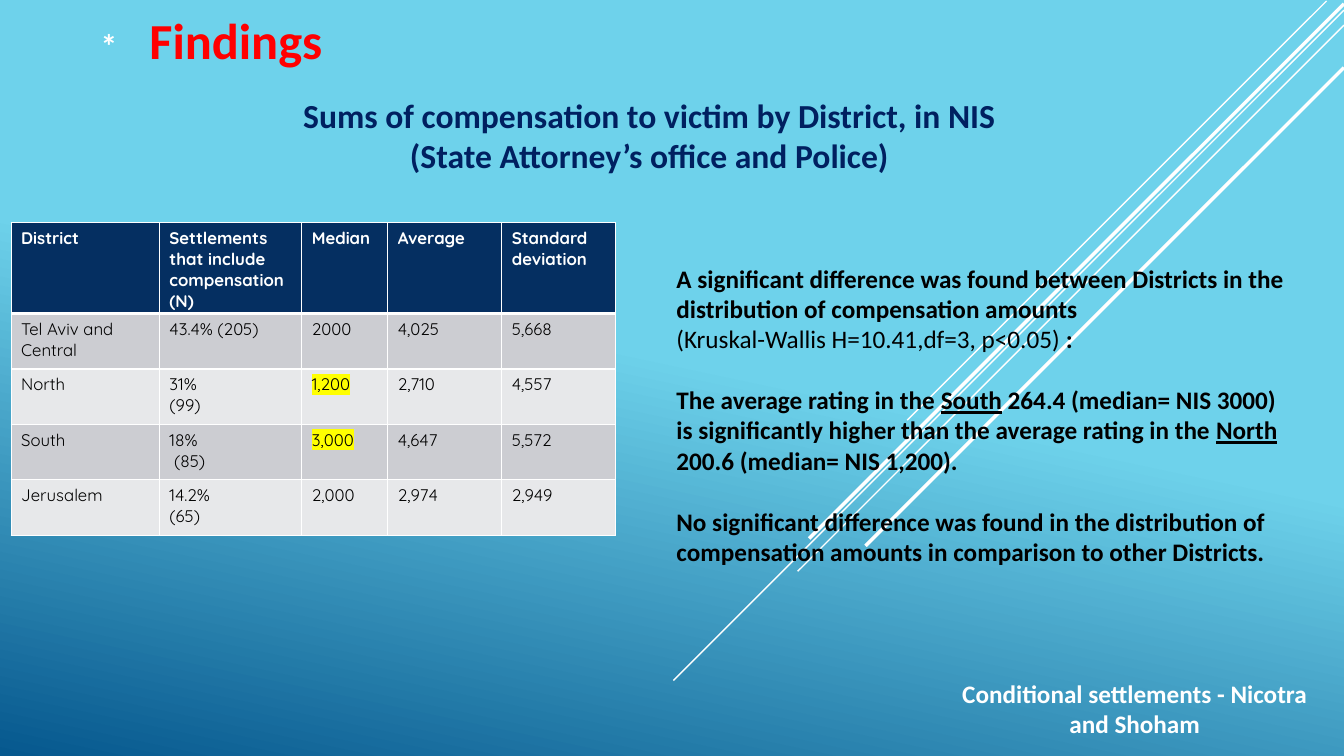
from lxml.etree import SubElement, fromstring
from pptx import Presentation
from pptx.dml.color import RGBColor
from pptx.enum.shapes import MSO_CONNECTOR
from pptx.enum.text import MSO_ANCHOR, MSO_AUTO_SIZE, PP_ALIGN
from pptx.oxml.ns import nsdecls, qn
from pptx.util import Inches, Pt

WHITE = RGBColor(0xFF, 0xFF, 0xFF)
BLACK = RGBColor(0, 0, 0)
RED = RGBColor(0xFF, 0, 0)
NAVY = RGBColor(0, 0x20, 0x60)
HEADER = RGBColor(0x05, 0x2F, 0x61)
BANDS = [RGBColor(0xE7, 0xE8, 0xEA), RGBColor(0xCC, 0xCD, 0xD2)]
SKY = RGBColor(0x6E, 0xD2, 0xEB)
DEEP = RGBColor(0x06, 0x58, 0x8E)
YELLOW = RGBColor(0xFF, 0xFF, 0)

prs = Presentation()
prs.slide_width, prs.slide_height = Inches(13.33), Inches(7.5)
W, H = prs.slide_width / 100, prs.slide_height / 100
s = prs.slides.add_slide(prs.slide_layouts[6])


def add_run(p, text, rgb, fmt):
    r = p.add_run()
    r.text = text
    r.font.color.rgb = rgb
    for key, value in fmt.items():
        setattr(r.font, key, value)
    return r


def add_text(box, paragraphs, rgb, fmt, para, frame):
    x, y, w, h = box
    tf = s.shapes.add_textbox(int(x * W), int(y * H), int(w * W), int(h * H)).text_frame
    for key, value in {"word_wrap": True, **frame}.items():
        setattr(tf, key, value)
    for i, runs in enumerate(paragraphs):
        p = tf.add_paragraph() if i else tf.paragraphs[0]
        for key, value in para.items():
            if i or key != "space_before":
                setattr(p, key, value)
        for text, extra in runs:
            if text == "\n":
                p.add_line_break()
            else:
                add_run(p, text, rgb, {**fmt, **extra})


fill = s.background.fill
fill.gradient()
fill.gradient_angle = 258
for stop, position, rgb in zip(fill.gradient_stops, (0.48, 1), (SKY, DEEP)):
    stop.position = position
    stop.color.rgb = rgb

for x, y, run, weight in [
    (98.7, 0.13, 31.2, 1),
    (100, 1.33, 49.9, 1),
    (100, 3.33, 40.65, 1),
    (100, 0.5, 39.8, 2.5),
    (100, 8.93, 35.6, 2.5),
]:
    line = s.shapes.add_connector(
        MSO_CONNECTOR.STRAIGHT,
        int(x * W), int(y * H), int((x - run) * W), int(y * H + run * W),
    )
    line.line.color.rgb = WHITE
    line.line.width = Pt(weight)
    SubElement(line._element.spPr, qn("a:effectLst"))

center = {"alignment": PP_ALIGN.CENTER}
grow = {"auto_size": MSO_AUTO_SIZE.SHAPE_TO_FIT_TEXT}
middle = {"vertical_anchor": MSO_ANCHOR.MIDDLE}
body = {"name": "Calibri", "size": Pt(18), "bold": True}
plain, under = {"bold": False}, {"underline": True}

findings = [
    [
        ("A significant difference was found between Districts in the distribution of compensation amounts ", {}),
        ("\n", {}),
        ("(Kruskal-Wallis H=10.41,df=3, p<0.05)", plain),
        (" :", {}),
    ],
    [
        ("The average rating in the ", {}),
        ("South", under),
        (" 264.4 (median= NIS 3000) is significantly higher than the average rating in the ", {}),
        ("North", under),
        (" 200.6 (median= NIS 1,200).", {}),
    ],
    [("No significant difference was found in the distribution of compensation amounts "
      "in comparison to other Districts.", {})],
]
heading = "Sums of compensation to victim by District, in NIS (State Attorney’s office and Police)"
footer = "Conditional settlements - Nicotra and Shoham"

for box, paragraphs, rgb, size, para, frame in [
    ((2.78, 0.4, 29.56, 9.73), [[("Findings", {})]], RED, 36, center, middle),
    ((6.75, 0, 85.6, 8.53), [[("*", {})]], WHITE, 24, {"line_spacing": 1.5}, grow),
    ((20.41, 11.87, 55.81, 16.13), [[(heading, {})]], NAVY, 24, center, grow),
    ((69.84, 89.07, 29.18, 9.47), [[(footer, {})]], WHITE, 18, center, grow),
    ((49.59, 34.13, 46.74, 45.33), findings, BLACK, 18, {"space_before": Pt(22)}, grow),
]:
    add_text(box, paragraphs, rgb, {**body, "size": Pt(size)}, para, frame)

rows = [
    ["District", "Settlements that include compensation (N)", "Median", "Average", "Standard deviation"],
    ["Tel Aviv and Central", "43.4% (205)", "2000", "4,025", "5,668"],
    ["North", "31%\n(99)", "1,200", "2,710", "4,557"],
    ["South", "18%\n (85)", "3,000", "4,647", "5,572"],
    ["Jerusalem", "14.2%\n(65)", "2,000", "2,974", "2,949"],
]
marked = {"1,200", "3,000"}
widths = [11.03, 10.6, 6.4, 8.48, 8.48]
heights = [10] + [7.33] * 4
table = s.shapes.add_table(
    len(rows), len(widths),
    int(0.83 * W), int(29.47 * H), int(sum(widths) * W), int(sum(heights) * H),
).table
for col, width in zip(table.columns, widths):
    col.width = int(width * W)
for row, height in zip(table.rows, heights):
    row.height = int(height * H)

for i, values in enumerate(rows):
    for j, value in enumerate(values):
        cell = table.cell(i, j)
        cell.fill.solid()
        cell.fill.fore_color.rgb = BANDS[i % 2] if i else HEADER
        for k, text in enumerate(value.split("\n")):
            p = cell.text_frame.add_paragraph() if k else cell.text_frame.paragraphs[0]
            fmt = {"name": "Quicksand", "size": Pt(12), "bold": i == 0}
            r = add_run(p, text, BLACK if i else WHITE, fmt)
            if text in marked:
                r._r.rPr.find(qn("a:solidFill")).addnext(fromstring(
                    f'<a:highlight {nsdecls("a")}><a:srgbClr val="{YELLOW}"/></a:highlight>'))
        for n, side in enumerate(["lnL", "lnR", "lnT", "lnB"]):
            weight = 3 if (i, side) in [(0, "lnB"), (1, "lnT")] else 1
            cell._tc.tcPr.insert(n, fromstring(
                f'<a:{side} {nsdecls("a")} w="{Pt(weight)}"><a:solidFill>'
                f'<a:srgbClr val="{WHITE}"/></a:solidFill></a:{side}>'))

prs.save("out.pptx")
